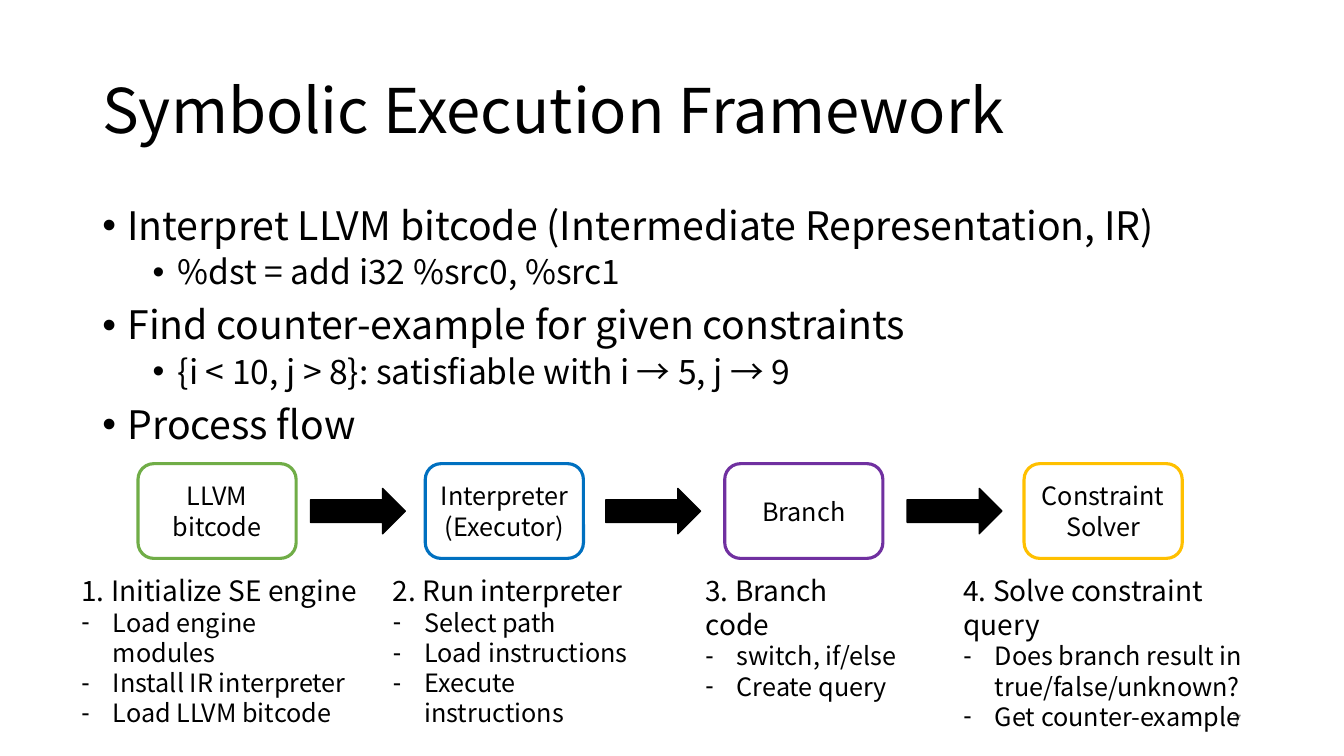
from dataclasses import dataclass

from lxml import etree
from pptx import Presentation
from pptx import util as u
from pptx.dml.color import RGBColor
from pptx.enum import shapes, text
from pptx.oxml import ns


@dataclass(frozen=True)
class Theme:
    font: str = "Noto Sans CJK KR"
    ink: str = "000000"
    paper: str = "FFFFFF"
    muted: str = "8C8C8C"
    green: str = "70AD47"
    blue: str = "0070C0"
    purple: str = "7030A0"
    amber: str = "FFC000"
    title: int = 44
    body: int = 28
    detail: int = 24
    heading: int = 20
    label: int = 18
    number: int = 12


THEME = Theme()
LEFT, CENTER, RIGHT = text.PP_ALIGN.LEFT, text.PP_ALIGN.CENTER, text.PP_ALIGN.RIGHT
TOP, MIDDLE = text.MSO_ANCHOR.TOP, text.MSO_ANCHOR.MIDDLE

BODY = [
    (0, "Interpret LLVM bitcode (Intermediate Representation, IR)"),
    (1, "%dst = add i32 %src0, %src1"),
    (0, "Find counter-example for given constraints"),
    (1, "{i < 10, j > 8}: satisfiable with i → 5, j → 9"),
    (0, "Process flow"),
]

# Box left, outline, box lines, column left, column width, heading, points
STAGES = [
    (98.6, THEME.green, ["LLVM", "bitcode"], 51.1, 216, "1. Initialize SE engine",
     ["Load engine modules", "Install IR interpreter", "Load LLVM bitcode"]),
    (303.8, THEME.blue, ["Interpreter", "(Executor)"], 273.6, 200.2, "2. Run interpreter",
     ["Select path", "Load instructions", "Execute instructions"]),
    (517.7, THEME.purple, ["Branch"], 496.8, 151.2, "3. Branch code",
     ["switch, if/else", "Create query"]),
    (731.5, THEME.amber, ["Constraint", "Solver"], 681.1, 242.6, "4. Solve constraint query",
     ["Does branch result in \vtrue/false/unknown?", "Get counter-example"]),
]
ARROW_LEFTS = [221.8, 432.7, 648]
BOX_TOP, BOX_WIDTH, BOX_HEIGHT = 331.2, 113, 67.7
ARROW_WIDTH, ARROW_HEIGHT = 67.7, 32.4
COLUMN_TOP, HEADING_HEIGHT, POINT_HEIGHT = 406, 32, 29


def write(paragraph, words, size, color=THEME.ink, align=LEFT, spacing=None,
          before=0, bullet=None, margin=0, hanging=0):
    """Fill a paragraph; margin and hanging are the bullet indents in points."""
    paragraph.text = words
    paragraph.alignment = align
    paragraph.space_before = u.Pt(before)
    if spacing:
        paragraph.line_spacing = spacing
    for run in paragraph.runs:
        run.font.name = THEME.font
        run.font.size = u.Pt(size)
        run.font.color.rgb = RGBColor.from_string(color)
        properties = run.font._element
        for script in ("a:ea", "a:cs"):
            etree.SubElement(properties, ns.qn(script), typeface=THEME.font)
    if bullet:
        properties = paragraph._p.get_or_add_pPr()
        properties.set("marL", str(u.Pt(margin)))
        properties.set("indent", str(-u.Pt(hanging)))
        etree.SubElement(properties, ns.qn("a:buFont"), typeface="Arial")
        etree.SubElement(properties, ns.qn("a:buChar"), char=bullet)


class SlideBuilder:
    def __init__(self, slide, theme):
        self.slide = slide
        self.theme = theme

    def fill_text(self, frame, paragraphs, anchor):
        """Write (words, format) pairs into a text frame."""
        frame.word_wrap = True
        frame.vertical_anchor = anchor
        for index, (words, style) in enumerate(paragraphs):
            paragraph = frame.add_paragraph() if index else frame.paragraphs[0]
            write(paragraph, words, **style)

    def text_box(self, left, top, width, height, paragraphs, anchor=TOP):
        box = self.slide.shapes.add_textbox(*map(u.Pt, (left, top, width, height)))
        self.fill_text(box.text_frame, paragraphs, anchor)

    def shape(self, kind, left, top, width, height, fill, line, weight):
        shape = self.slide.shapes.add_shape(kind, *map(u.Pt, (left, top, width, height)))
        shape.shadow.inherit = False
        shape.fill.solid()
        shape.fill.fore_color.rgb = RGBColor.from_string(fill)
        shape.line.color.rgb = RGBColor.from_string(line)
        shape.line.width = u.Pt(weight)
        return shape

    def stage_box(self, left, outline, lines):
        box = self.shape(shapes.MSO_SHAPE.ROUNDED_RECTANGLE, left, BOX_TOP, BOX_WIDTH,
                         BOX_HEIGHT, self.theme.paper, outline, 2.25)
        style = dict(size=self.theme.label, align=CENTER)
        self.fill_text(box.text_frame, [(line, style) for line in lines], MIDDLE)

    def arrow(self, left):
        top = BOX_TOP + (BOX_HEIGHT - ARROW_HEIGHT) / 2
        self.shape(shapes.MSO_SHAPE.RIGHT_ARROW, left, top, ARROW_WIDTH, ARROW_HEIGHT,
                   self.theme.ink, self.theme.ink, 1)

    def stage_notes(self, left, width, heading, points):
        style = dict(size=self.theme.label, bullet="-", margin=22.5, hanging=22.5)
        paragraphs = [(heading, dict(size=self.theme.heading))]
        paragraphs += [(point, style) for point in points]
        height = HEADING_HEIGHT + POINT_HEIGHT * len(points)
        self.text_box(left, COLUMN_TOP, width, height, paragraphs)

    def outline(self, left, top, width, height, items):
        """Write a bulleted list of (level, words) pairs."""
        styles = [
            dict(size=self.theme.body, before=10, margin=18),
            dict(size=self.theme.detail, before=5, margin=54),
        ]
        common = dict(bullet="•", hanging=18, spacing=0.9)
        paragraphs = [(words, styles[level] | common) for level, words in items]
        self.text_box(left, top, width, height, paragraphs)


def main():
    presentation = Presentation()
    presentation.slide_width, presentation.slide_height = u.Pt(960), u.Pt(540)
    slide = presentation.slides.add_slide(presentation.slide_layouts[6])
    builder = SlideBuilder(slide, THEME)

    title_style = dict(size=THEME.title, spacing=0.9)
    builder.text_box(66, 28.75, 828, 104.4, [("Symbolic Execution Framework", title_style)], MIDDLE)
    builder.outline(66, 143.75, 828, 342.6, BODY)
    number_style = dict(size=THEME.number, color=THEME.muted, align=RIGHT)
    builder.text_box(678, 500.5, 216, 28.75, [("7", number_style)], MIDDLE)

    for box_left, outline, lines, notes_left, notes_width, heading, points in STAGES:
        builder.stage_box(box_left, outline, lines)
        builder.stage_notes(notes_left, notes_width, heading, points)
    for left in ARROW_LEFTS:
        builder.arrow(left)

    presentation.save("out.pptx")


if __name__ == "__main__":
    main()
